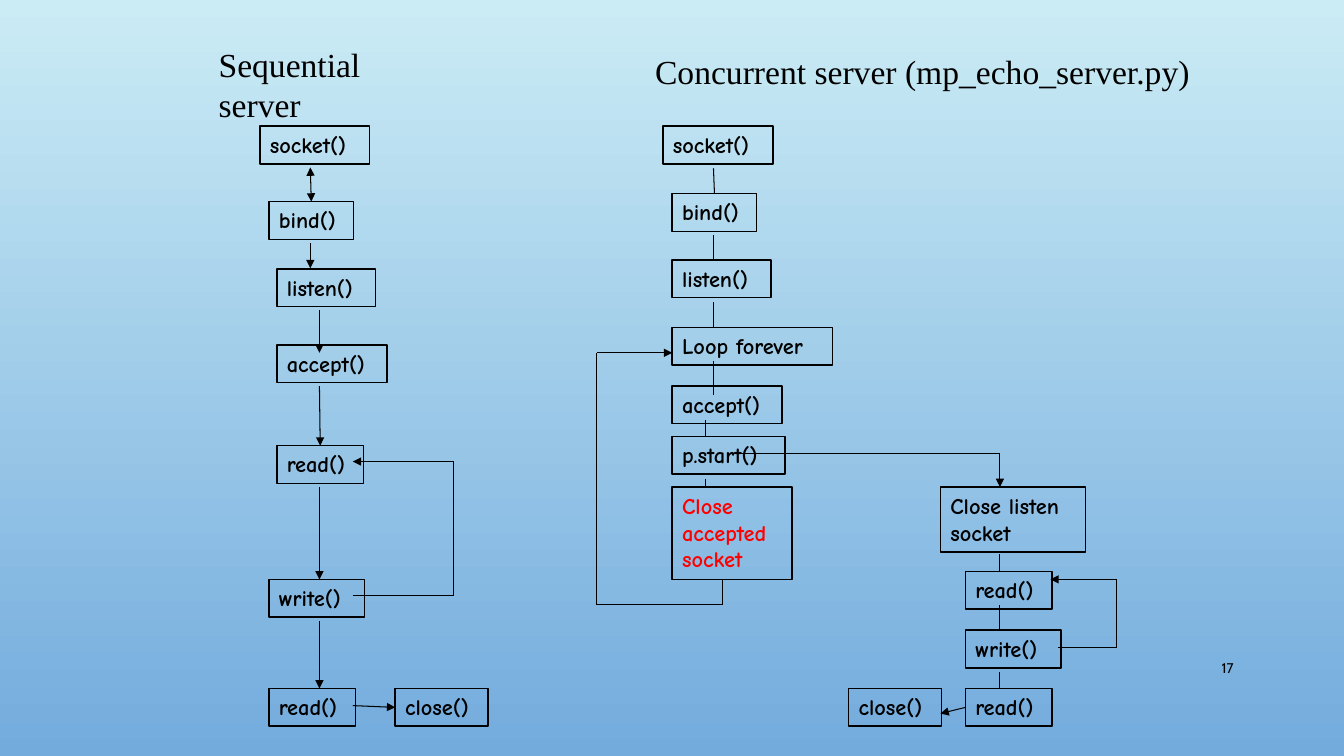
"""Builds a slide that compares the calls of a sequential and a concurrent server."""
from itertools import pairwise

from lxml.etree import SubElement
from pptx import Presentation
from pptx.dml.color import RGBColor
from pptx.enum.shapes import MSO_CONNECTOR as Link, MSO_SHAPE as Preset
from pptx.enum.text import MSO_ANCHOR as Anchor, PP_ALIGN as Align
from pptx.oxml.ns import qn
from pptx.util import Cm, Pt

COLORS = {"ink": "000000", "alert": "FF0000", "sky": "CBECF5", "sea": "73ABDD"}

CALL_WIDTHS = {
    "socket()": 2.77, "bind()": 2.13, "listen()": 2.49, "accept()": 2.77,
    "read()": 2.18, "write()": 2.41, "close()": 2.34, "Loop forever": 4.04,
    "p.start()": 2.84, "Close\naccepted\nsocket": 3.02, "Close listen\nsocket": 3.66,
}

SEQUENTIAL_CALLS = [
    ("socket()", 6.55, 3.18), ("bind()", 6.78, 5.08), ("listen()", 6.98, 6.78),
    ("accept()", 6.98, 8.69), ("read()", 6.98, 11.23), ("write()", 6.78, 14.6),
    ("read()", 6.78, 17.35), ("close()", 9.96, 17.35),
]
PARENT_CALLS = [
    ("socket()", 16.71, 3.18), ("bind()", 16.94, 4.88), ("listen()", 16.94, 6.55),
    ("Loop forever", 16.94, 8.25), ("accept()", 16.94, 9.73), ("p.start()", 16.94, 11),
]
CHILD_CALLS = [
    ("Close listen\nsocket", 23.7, 12.27), ("read()", 24.33, 14.4),
    ("write()", 24.33, 15.88), ("read()", 24.33, 17.35), ("close()", 21.39, 17.35),
]

SEQUENTIAL_STEPS = [
    (7.82, 6.12, 6.76), (8.05, 7.82, 8.89), (8.05, 9.73, 11.2),
    (8.05, 12.27, 14.6), (8.05, 15.65, 17.35),
]
CONCURRENT_STEPS = [
    (17.98, 4.24, 4.88), (17.98, 5.92, 6.55), (17.98, 7.62, 8.25), (17.98, 9.09, 9.96),
    (17.78, 10.59, 11), (17.78, 12.07, 12.27),
    (25.2, 13.97, 14.4), (25.2, 15.24, 15.88), (25.2, 16.94, 17.35),
]
ROUTES = {
    "sequential loop": [(8.89, 15.01), (11.43, 15.01), (11.43, 11.63), (8.89, 11.63)],
    "sequential end": [(8.89, 17.78), (9.96, 17.78)],
    "accept loop": [(18.21, 14.6), (18.21, 15.24), (15.04, 15.24), (15.04, 8.89), (16.94, 8.89)],
    "child start": [(18.62, 11.43), (25.2, 11.43), (25.2, 12.27)],
    "child loop": [(26.67, 16.31), (28.14, 16.31), (28.14, 14.6), (26.47, 14.6)],
    "child end": [(24.33, 17.78), (23.7, 17.98)],
}


def rgb(name):
    return RGBColor.from_string(COLORS[name])


def write(frame, text, *, font, size, color="ink", bold=False, align=Align.LEFT,
          anchor=Anchor.TOP, wrap=True):
    frame.word_wrap = wrap
    frame.vertical_anchor = anchor
    for number, line in enumerate(text.split("\n")):
        paragraph = frame.add_paragraph() if number else frame.paragraphs[0]
        paragraph.alignment = align
        run = paragraph.add_run()
        run.text = line
        run.font.name, run.font.size, run.font.bold = font, Pt(size), bold
        run.font.color.rgb = rgb(color)


class FlowSlide:
    call_font = "Comic Neue"
    title_font = "Times New Roman"
    number_font = "Cabin"
    first_line, next_line = 0.95, 0.69
    snap = Cm(0.06)

    def __init__(self, slide):
        self.slide = slide
        self.shapes = slide.shapes
        self.sides = []

    def backdrop(self):
        fill = self.slide.background.fill
        fill.gradient()
        fill.gradient_angle = 270
        for stop, name in zip(fill.gradient_stops, ("sky", "sea")):
            stop.color.rgb = rgb(name)

    def label(self, text, left, top, width, height, **style):
        area = self.shapes.add_textbox(Cm(left), Cm(top), Cm(width), Cm(height))
        write(area.text_frame, text, **style)

    def title(self, text, left, top, width):
        self.label(text, left, top, width, 1.27, font=self.title_font, size=24, wrap=False)

    def call(self, text, left, top, color="ink"):
        height = self.first_line + self.next_line * text.count("\n")
        box = self.shapes.add_shape(Preset.RECTANGLE, Cm(left), Cm(top),
                                    Cm(CALL_WIDTHS[text]), Cm(height))
        box.shadow.inherit = False
        box.fill.background()
        box.line.color.rgb = rgb("ink")
        box.line.width = Pt(1)
        write(box.text_frame, text, font=self.call_font, size=16, color=color, bold=True)
        middle_x, middle_y = box.left + box.width // 2, box.top + box.height // 2
        middles = [(middle_x, box.top), (box.left, middle_y),
                   (middle_x, box.top + box.height), (box.left + box.width, middle_y)]
        self.sides += [(box, site, x, y) for site, (x, y) in enumerate(middles)]

    def join(self, connect, x, y):
        for box, site, side_x, side_y in self.sides:
            if max(abs(x - side_x), abs(y - side_y)) <= self.snap:
                connect(box, site)
                return

    def line(self, start, end, heads=()):
        ends = [Cm(value) for value in (*start, *end)]
        link = self.shapes.add_connector(Link.STRAIGHT, *ends)
        self.join(link.begin_connect, *ends[:2])
        self.join(link.end_connect, *ends[2:])
        link.line.color.rgb = rgb("ink")
        link.line.width = Pt(0.75)
        for head in heads:
            SubElement(link.get_or_add_ln(), qn(f"a:{head}"), type="triangle")
        SubElement(link.element.spPr, qn("a:effectLst"))

    def route(self, points):
        legs = list(pairwise(points))
        for leg in legs[:-1]:
            self.line(*leg)
        self.line(*legs[-1], heads=["tailEnd"])


def main():
    deck = Presentation()
    deck.slide_width, deck.slide_height = Cm(33.87), Cm(19.05)
    flow = FlowSlide(deck.slides.add_slide(deck.slide_layouts[6]))
    flow.backdrop()

    for call in SEQUENTIAL_CALLS + PARENT_CALLS + CHILD_CALLS:
        flow.call(*call)
    flow.call("Close\naccepted\nsocket", 16.94, 12.27, color="alert")

    flow.line((7.82, 4.22), (7.82, 5.08), heads=["headEnd", "tailEnd"])
    for steps, heads in ((SEQUENTIAL_STEPS, ["tailEnd"]), (CONCURRENT_STEPS, [])):
        for x, top, bottom in steps:
            flow.line((x, top), (x, bottom), heads)
    for points in ROUTES.values():
        flow.route(points)

    flow.title("Sequential server", 5.26, 0.97, 6.35)
    flow.title("Concurrent server (mp_echo_server.py)", 16.26, 1.17, 14.1)
    flow.label("17", 29.21, 16.33, 2.13, 1.02, font=flow.number_font, size=10,
               align=Align.RIGHT, anchor=Anchor.MIDDLE)
    deck.save("out.pptx")


if __name__ == "__main__":
    main()
